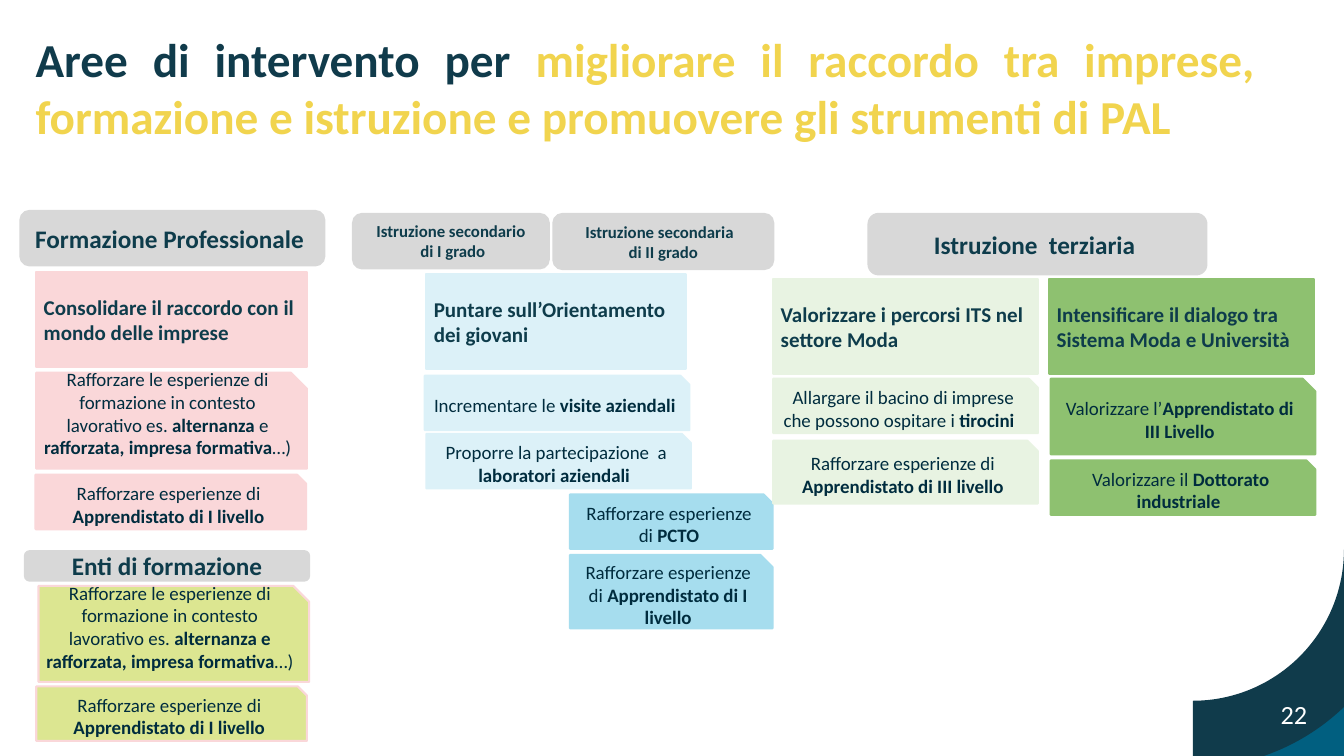
from math import acos, asin, cos, sin
from pptx import Presentation
from pptx.dml.color import RGBColor
from pptx.enum.shapes import MSO_SHAPE
from pptx.enum.text import MSO_ANCHOR, PP_ALIGN
from pptx.util import Inches, Pt

WIDTH, HEIGHT = 17.78, 10
COLS, ROWS = 177.8, 100
INK, NAVY, DARK, TEAL = "0E3C4B", "103B4B", "002C3E", "015F80"
YELLOW, WHITE, GREY = "F1D44E", "FFFFFF", "D8D8D8"
PINK, LIME, ICE, SKY = "FAD7D9", "DCE691", "DCF1F8", "A6DDEE"
MINT, GREEN = "E8F3E2", "8EC170"

RAFFORZARE = "Rafforzare esperienze di "
ESPERIENZE = "Rafforzare le esperienze di formazione in contesto lavorativo es. "
PRIMO = RAFFORZARE + "**Apprendistato di I livello"

HEADERS = [
    (2.7, 27.9, 40.2, 7.2, "Formazione Professionale ", 24),
    (46.7, 28.3, 25.9, 7.2, "Istruzione secondario\n di I grado", 16),
    (73.2, 28.3, 29.1, 7.3, "Istruzione secondaria  \ndi II grado", 16),
    (114.9, 28.3, 44.7, 8, "Istruzione  terziaria ", 24),
    (3.3, 72.9, 37.6, 3.9, "Enti di formazione", 24),
]
TOPICS = [
    (4.8, 36, 35.8, "Consolidare il raccordo con il mondo delle imprese", PINK),
    (56.4, 36.3, 34.3, "Puntare sull’Orientamento dei giovani", ICE),
    (102.3, 36.9, 35, "Valorizzare i percorsi ITS nel settore Moda", MINT),
    (138.8, 36.9, 35, "Intensificare il dialogo tra Sistema Moda e Università", GREEN),
]
ACTIONS = [
    (4.8, 49.3, 35.8, 12.7, ESPERIENZE
     + "**alternanza** e **rafforzata, impresa formativa**…)  ", PINK, PINK),
    (4.7, 62.8, 35.8, 7.2, PRIMO, PINK, PINK),
    (5.1, 77.5, 35.8, 12.7, ESPERIENZE
     + "**alternanza e rafforzata, impresa formativa**…)  ", LIME, PINK),
    (4.8, 90.8, 35.8, 7.2, PRIMO, LIME, PINK),
    (56.2, 49.7, 35, 7.2, "Incrementare le **visite aziendali ", ICE, ICE),
    (56.4, 57.4, 35, 7.2,
     "Proporre la partecipazione  a **laboratori aziendali ", ICE, ICE),
    (75.4, 65.4, 26.8, 7.2, RAFFORZARE + "**PCTO", SKY, SKY),
    (75.4, 73.4, 26.8, 9.7, PRIMO, SKY, SKY),
    (102.3, 50.1, 35, 7.2,
     "Allargare il bacino di imprese che possono ospitare i **tirocini  ", MINT, MINT),
    (102.3, 58.3, 35, 8.3, RAFFORZARE + "**Apprendistato di III livello", MINT, MINT),
    (139, 50.1, 35, 10, "Valorizzare l’**Apprendistato di III Livello", GREEN, GREEN),
    (139, 60.9, 35, 7.2, "Valorizzare il **Dottorato industriale ", GREEN, GREEN),
]


def rgb(value):
    """Turn a hex string into a colour."""
    return RGBColor.from_string(value)


class Deck:
    """Hold the style and the slide being drawn, measured in grid cells."""

    font = "Calibri"

    def __init__(self):
        """Open a deck with one blank slide."""
        self.prs = Presentation()
        self.prs.slide_width, self.prs.slide_height = Inches(WIDTH), Inches(HEIGHT)
        self.s = self.prs.slides.add_slide(self.prs.slide_layouts[6])
        self.col = self.prs.slide_width / COLS
        self.row = self.prs.slide_height / ROWS

    def area(self, x, y, w, h):
        """Convert columns and rows to slide lengths."""
        return (round(x * self.col), round(y * self.row),
                round(w * self.col), round(h * self.row))

    def style(self, r, size, color, bold):
        """Format one run."""
        r.font.name, r.font.size, r.font.bold = self.font, Pt(size), bold
        r.font.color.rgb = rgb(color)

    def fill_text(self, tf, text, size, color, align, bold=False):
        """Fill a frame, switching weight at each double asterisk."""
        tf.word_wrap = True
        tf.vertical_anchor = MSO_ANCHOR.MIDDLE
        for i, line in enumerate(text.split("\n")):
            p = tf.add_paragraph() if i else tf.paragraphs[0]
            p.alignment = align
            for j, part in enumerate(line.split("**")):
                r = p.add_run()
                r.text = part
                self.style(r, size, color, bold or j % 2 == 1)

    def box(self, kind, area, fill, line):
        """Draw a flat box and return its text frame."""
        sp = self.s.shapes.add_shape(kind, *self.area(*area))
        sp.shadow.inherit = False
        sp.fill.solid()
        sp.fill.fore_color.rgb = rgb(fill)
        sp.line.color.rgb = rgb(line)
        sp.line.width = Pt(2)
        return sp.text_frame

    def header(self, x, y, w, h, text, size):
        """Draw a rounded school-level header."""
        tf = self.box(MSO_SHAPE.ROUNDED_RECTANGLE, (x, y, w, h), GREY, GREY)
        self.fill_text(tf, text, size, INK, PP_ALIGN.CENTER, True)

    def topic(self, x, y, w, text, fill):
        """Draw a topic block."""
        tf = self.box(MSO_SHAPE.RECTANGLE, (x, y, w, 12.5), fill, fill)
        self.fill_text(tf, text, 20, INK, PP_ALIGN.LEFT, True)

    def action(self, x, y, w, h, text, fill, line):
        """Draw an action card with a snipped corner."""
        tf = self.box(MSO_SHAPE.SNIP_1_RECTANGLE, (x, y, w, h), fill, line)
        self.fill_text(tf, text, 18, DARK, PP_ALIGN.CENTER)

    def label(self, area, parts, size, align, bold=False):
        """Place a text box made of coloured parts."""
        tf = self.s.shapes.add_textbox(*self.area(*area)).text_frame
        tf.word_wrap = True
        tf.margin_left = tf.margin_right = tf.margin_bottom = 0
        tf.margin_top = Inches(0.01)
        p = tf.paragraphs[0]
        p.alignment, p.space_before = align, Pt(1)
        for text, color in parts:
            r = p.add_run()
            r.text = text
            self.style(r, size, color, bold)

    def outline(self, points, fill):
        """Draw a closed filled outline."""
        pts = [self.area(x, y, 0, 0)[:2] for x, y in points]
        fb = self.s.shapes.build_freeform(*pts[0])
        fb.add_line_segments(pts[1:])
        sp = fb.convert_to_shape()
        sp.shadow.inherit = False
        sp.fill.solid()
        sp.fill.fore_color.rgb = rgb(fill)
        sp.line.fill.background()

    def corner(self, cx=157.8, cy=72.7, inner=20, outer=28.87, steps=48):
        """Draw the ring-shaped corner over its base."""
        def arc(radius, start, end):
            """List points along an arc around the corner's centre."""
            angles = [start + (end - start) * i / steps for i in range(steps + 1)]
            return [(cx + radius * cos(a), cy + radius * sin(a)) for a in angles]

        base = cy + inner
        self.outline([(COLS, base), (cx, base), (cx, ROWS), (COLS, ROWS)], TEAL)
        low, high = acos((COLS - cx) / outer), asin((ROWS - cy) / outer)
        self.outline(arc(inner, 0, acos(0)) + [(cx, ROWS)] + arc(outer, high, low), NAVY)


def main():
    """Build and save the slide."""
    deck = Deck()
    deck.corner()
    deck.label((4.7, 3.9, 164.6, 15.3), [
        ("Aree di intervento per ", NAVY),
        ("migliorare il raccordo tra imprese,  formazione e istruzione "
         "e promuovere gli strumenti di PAL", YELLOW),
    ], 45, PP_ALIGN.JUSTIFY, True)
    for header in HEADERS:
        deck.header(*header)
    for topic in TOPICS:
        deck.topic(*topic)
    for action in ACTIONS:
        deck.action(*action)
    deck.label((169.4, 92.3, 4.5, 4.3), [("22", WHITE)], 25, PP_ALIGN.LEFT)
    deck.prs.save("out.pptx")


if __name__ == "__main__":
    main()
